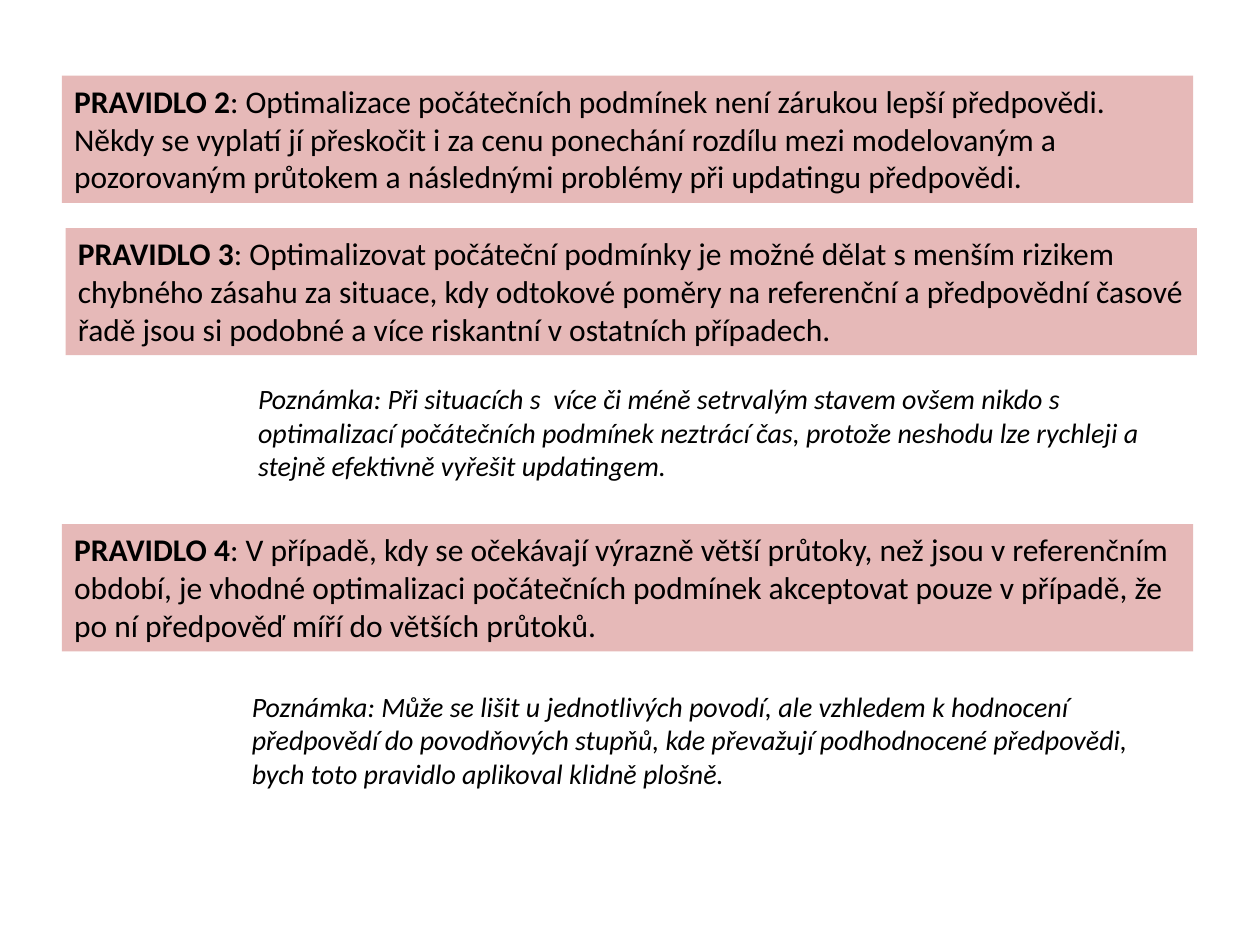
from pptx import Presentation
from pptx.dml.color import RGBColor
from pptx.enum.shapes import MSO_SHAPE
from pptx.enum.text import MSO_ANCHOR, MSO_AUTO_SIZE, PP_ALIGN
from pptx.util import Inches, Pt

FONT = "Calibri"
TEXT_COLOR = "000000"
RULE_FILL = "E6B9B8"
RULE_SIZE = (8.98, 1.01)
NOTE_SIZE = (7.51, 0.91)

# Content: left, top, text
RULES = [
    (0.49, 0.6, "PRAVIDLO 2",
     ": Optimalizace počátečních podmínek není zárukou lepší předpovědi. "
     "Někdy se vyplatí jí přeskočit i za cenu ponechání rozdílu mezi modelovaným "
     "a pozorovaným průtokem a následnými problémy při updatingu předpovědi."),
    (0.52, 1.81, "PRAVIDLO 3",
     ": Optimalizovat počáteční podmínky je možné dělat s menším rizikem "
     "chybného zásahu za situace, kdy odtokové poměry na referenční a předpovědní "
     "časové řadě jsou si podobné a více riskantní v ostatních případech."),
    (0.49, 4.16, "PRAVIDLO 4",
     ": V případě, kdy se očekávají výrazně větší průtoky, než jsou v referenčním "
     "období, je vhodné optimalizaci počátečních podmínek akceptovat pouze "
     "v případě, že po ní předpověď míří do větších průtoků."),
]
NOTES = [
    (1.95, 2.98,
     "Poznámka: Při situacích s  více či méně setrvalým stavem ovšem nikdo s "
     "optimalizací počátečních podmínek neztrácí čas, protože neshodu lze rychleji "
     "a stejně efektivně vyřešit updatingem."),
    (1.9, 5.42,
     "Poznámka: Může se lišit u jednotlivých povodí, ale vzhledem k hodnocení "
     "předpovědí do povodňových stupňů, kde převažují podhodnocené předpovědi, "
     "bych toto pravidlo aplikoval klidně plošně."),
]


def color(hex_string):
    return RGBColor.from_string(hex_string)


def write(shape, runs, size):
    """Fill a shape with one left-aligned paragraph of (text, bold, italic) runs."""
    frame = shape.text_frame
    frame.word_wrap = True
    frame.auto_size = MSO_AUTO_SIZE.SHAPE_TO_FIT_TEXT
    frame.vertical_anchor = MSO_ANCHOR.TOP
    paragraph = frame.paragraphs[0]
    paragraph.alignment = PP_ALIGN.LEFT
    for text, bold, italic in runs:
        run = paragraph.add_run()
        run.text = text
        font = run.font
        font.name, font.size = FONT, Pt(size)
        font.bold, font.italic = bold, italic
        font.color.rgb = color(TEXT_COLOR)


presentation = Presentation()
presentation.slide_width, presentation.slide_height = Inches(10), Inches(7.5)
slide = presentation.slides.add_slide(presentation.slide_layouts[6])

# Rule panels
for left, top, title, body in RULES:
    panel = slide.shapes.add_shape(
        MSO_SHAPE.RECTANGLE, *map(Inches, (left, top, *RULE_SIZE)))
    panel.shadow.inherit = False
    panel.fill.solid()
    panel.fill.fore_color.rgb = color(RULE_FILL)
    panel.line.fill.background()
    write(panel, [(title, True, False), (body, False, False)], 18)

# Notes below the rules
for left, top, text in NOTES:
    note = slide.shapes.add_textbox(*map(Inches, (left, top, *NOTE_SIZE)))
    write(note, [(text, False, True)], 16)

presentation.save("out.pptx")
